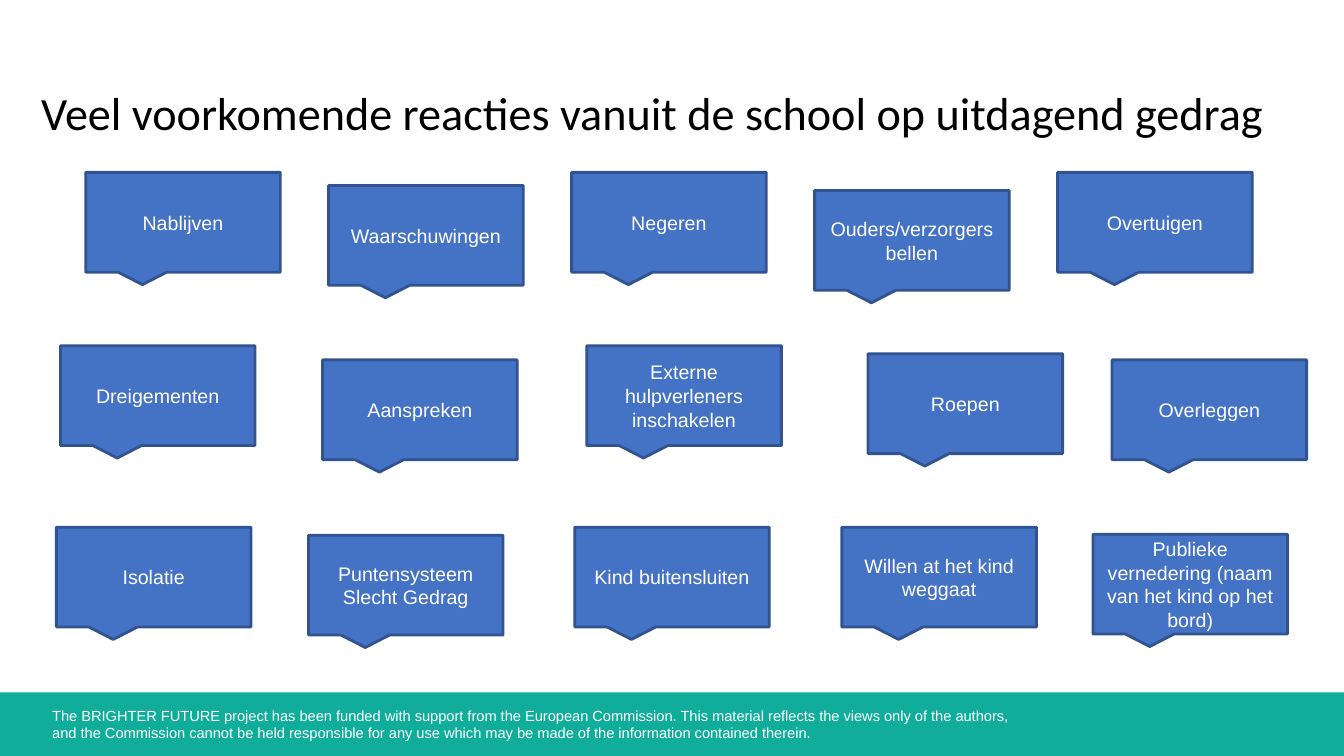
from dataclasses import dataclass

from pptx import Presentation
from pptx.dml.color import RGBColor
from pptx.enum import shapes, text
from pptx.util import Inches, Pt

TITLE = "Veel voorkomende reacties vanuit de school op uitdagend gedrag"
FOOTER = (
    "The BRIGHTER FUTURE project has been funded with support from the European Commission. "
    "This material reflects the views only of the authors,",
    "and the Commission cannot be held responsible for any use which may be made "
    "of the information contained therein.",
)

# Each row: top, then (label, shift from its column, drop below the top)
ROWS = [
    (1.71, [
        ("Nablijven", 0, 0),
        ("Waarschuwingen", 0, 0.13),
        ("Negeren", 0, 0),
        ("Ouders/verzorgers bellen", 0, 0.18),
        ("Overtuigen", 0, 0),
    ]),
    (3.43, [
        ("Dreigementen", -0.25, 0),
        ("Aanspreken", -0.06, 0.14),
        ("Externe hulpverleners inschakelen", 0.15, 0),
        ("Roepen", 0.53, 0.08),
        ("Overleggen", 0.54, 0.14),
    ]),
    (5.23, [
        ("Isolatie", -0.29, 0),
        ("Puntensysteem Slecht Gedrag", -0.2, 0.08),
        ("Kind buitensluiten", 0.03, 0),
        ("Willen at het kind weggaat", 0.27, 0),
        ("Publieke vernedering (naam van het kind op het bord)", 0.35, 0.07),
    ]),
]

WIDE, HIGH = 13.33, 7.5
LEFT, PITCH = 0.85, 2.41
CARD = (1.93, 0.99)
TAIL = (-0.208, 0.625)
BAND = 0.63


@dataclass(frozen=True)
class Theme:
    blue: RGBColor = RGBColor(0x44, 0x72, 0xC4)
    edge: RGBColor = RGBColor(0x31, 0x53, 0x8F)
    teal: RGBColor = RGBColor(0x10, 0xAD, 0x9A)
    white: RGBColor = RGBColor(0xFF, 0xFF, 0xFF)
    black: RGBColor = RGBColor(0, 0, 0)
    head: float = 33
    body: float = 14
    note: float = 10.5
    sans: str = "Arial"
    title: str = "Calibri"


THEME = Theme()


def write(frame, lines, size, color, font):
    """Fill the first paragraph, with a line break between lines."""
    frame.word_wrap = True
    para = frame.paragraphs[0]
    for i, line in enumerate(lines):
        if i:
            para.add_line_break()
        run = para.add_run()
        run.text = line
        run.font.size = Pt(size)
        run.font.color.rgb = color
        run.font.name = font
    return para


def add_form(slide, kind, box, fill):
    form = slide.shapes.add_shape(kind, *map(Inches, box))
    form.shadow.inherit = False
    form.fill.solid()
    form.fill.fore_color.rgb = fill
    form.line.fill.background()
    return form


def add_label(slide, box, lines, size, color, font):
    frame = slide.shapes.add_textbox(*map(Inches, box)).text_frame
    write(frame, lines, size, color, font)
    frame.auto_size = text.MSO_AUTO_SIZE.SHAPE_TO_FIT_TEXT


def add_bubble(slide, left, top, label):
    form = add_form(slide, shapes.MSO_SHAPE.RECTANGULAR_CALLOUT,
                    (left, top, *CARD), THEME.blue)
    form.adjustments[0], form.adjustments[1] = TAIL
    form.line.color.rgb = THEME.edge
    form.line.width = Pt(2)
    frame = form.text_frame
    frame.vertical_anchor = text.MSO_ANCHOR.MIDDLE
    para = write(frame, [label], THEME.body, THEME.white, THEME.sans)
    para.alignment = text.PP_ALIGN.CENTER


def main():
    deck = Presentation()
    deck.slide_width, deck.slide_height = Inches(WIDE), Inches(HIGH)
    slide = deck.slides.add_slide(deck.slide_layouts[6])

    add_form(slide, shapes.MSO_SHAPE.RECTANGLE,
             (0, HIGH - BAND, WIDE, BAND), THEME.teal)
    add_label(slide, (0.42, 6.96, 10, 0.45), FOOTER,
              THEME.note, THEME.white, THEME.sans)
    for top, row in ROWS:
        for col, (label, shift, drop) in enumerate(row):
            add_bubble(slide, LEFT + col * PITCH + shift, top + drop, label)
    add_label(slide, (0.31, 0.79, 12.57, 0.66), [TITLE],
              THEME.head, THEME.black, THEME.title)

    deck.save("out.pptx")


if __name__ == "__main__":
    main()
